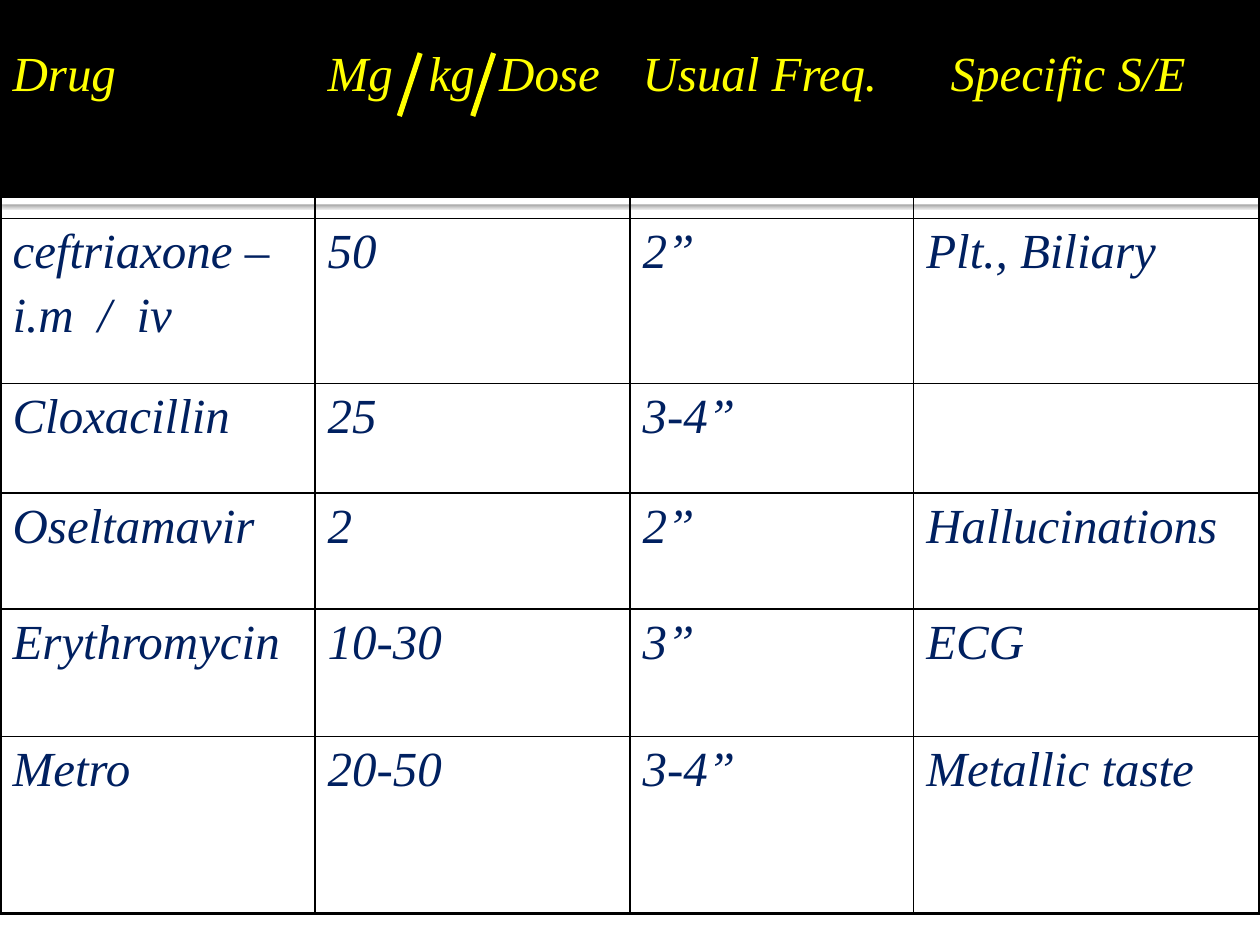
from lxml import etree
from pptx import Presentation
from pptx import util as u
from pptx.dml.color import RGBColor
from pptx.enum import shapes, text
from pptx.oxml.ns import qn

Cm, Pt = u.Cm, u.Pt
INK = {"head": "FFFF00", "body": "002060", "black": "000000", "white": "FFFFFF"}
FONT = "Times New Roman"
WIDE, HIGH = 25.4, 19.05
COLS = [6.35, 6.35, 5.72, 6.98]
ROWS = [3.56, 3.33, 2.21, 2.34, 2.57, 3.56]
THICK, THIN = 2.25, 1
# Each cell is a list of lines; tabs stand for the gaps within a line.
DRUGS = [
    [["Drug"], ["Mg\tkg\tDose"], ["Usual Freq."], ["Specific S/E"]],
    [["ceftriaxone –", "i.m\t/\tiv"], ["50"], ["2”"], ["Plt., Biliary"]],
    [["Cloxacillin"], ["25"], ["3-4”"], []],
    [["Oseltamavir"], ["2"], ["2”"], ["Hallucinations"]],
    [["Erythromycin"], ["10-30"], ["3”"], ["ECG"]],
    [["Metro"], ["20-50"], ["3-4”"], ["Metallic taste"]],
]
TABS = {"Mg\tkg\tDose": [2.04, 3.46], "i.m\t/\tiv": [1.72, 2.5]}
INDENT = {"Specific S/E": 0.49}


def rgb(name):
    return RGBColor.from_string(INK[name])


def sub(node, tag, **attrs):
    return etree.SubElement(node, qn(tag), {k: str(v) for k, v in attrs.items()})


def bar(slide, left, top, width, height, color):
    rect = slide.shapes.add_shape(shapes.MSO_SHAPE.RECTANGLE, Cm(left), Cm(top),
                                  Cm(width), Cm(height))
    rect.shadow.inherit = False
    rect.fill.solid()
    rect.fill.fore_color.rgb = rgb(color)
    rect.line.fill.background()
    return rect


def banner(slide, left, top, width, height):
    """Black band with a thin white strip below it that casts a shadow."""
    strip = bar(slide, left, top + height, width, 0.13, "white")
    effects = strip.element.spPr.find(qn("a:effectLst"))
    shade = sub(effects, "a:outerShdw", blurRad=Pt(2.5), dist=Pt(0.8),
                dir=90 * 60000, algn="ctr", rotWithShape=0)
    sub(sub(shade, "a:srgbClr", val=INK["black"]), "a:alpha", val=60000)
    bar(slide, left, top, width, height, "black")


def edge(cell, row, col):
    """Thick borders on the outside of the grid, thin ones inside."""
    props = cell._tc.get_or_add_tcPr()
    outer = {"L": col == 0, "R": col == len(COLS) - 1,
             "T": row == 0, "B": row == len(ROWS) - 1}
    for side, thick in outer.items():
        line = sub(props, "a:ln" + side, w=Pt(THICK if thick else THIN))
        sub(sub(line, "a:solidFill"), "a:srgbClr", val=INK["black"])
    cell.fill.background()


def write(cell, lines, color):
    frame = cell.text_frame
    cell.vertical_anchor = text.MSO_ANCHOR.TOP
    for i, words in enumerate(lines):
        para = frame.add_paragraph() if i else frame.paragraphs[0]
        para.space_before = Pt(5.6 if i else 0)
        props = para._p.get_or_add_pPr()
        if words in INDENT:
            props.set("marL", str(Cm(INDENT[words])))
        if words in TABS:
            stops = sub(props, "a:tabLst")
            for pos in TABS[words]:
                sub(stops, "a:tab", pos=Cm(pos), algn="l")
        run = para.add_run()
        run.text = words
        font = run.font
        font.name, font.size, font.italic = FONT, Pt(28), True
        font.color.rgb = rgb(color)


def grid(slide, left, top, width, height):
    table = slide.shapes.add_table(len(ROWS), len(COLS), Cm(left), Cm(top),
                                   Cm(width), Cm(height)).table
    table.first_row = table.horz_banding = False
    for col, size in zip(table.columns, COLS):
        col.width = Cm(size)
    for row, size in zip(table.rows, ROWS):
        row.height = Cm(size)
    for r, drug in enumerate(DRUGS):
        for c, lines in enumerate(drug):
            cell = table.cell(r, c)
            edge(cell, r, c)
            write(cell, lines, "body" if r else "head")


def slashes(slide, left, top, width, height):
    """Two slanted strokes between the units of the dose heading."""
    lean = 0.42
    for x in (left, left + width - lean):
        line = slide.shapes.add_connector(shapes.MSO_CONNECTOR.STRAIGHT, Cm(x),
                                          Cm(top + height), Cm(x + lean), Cm(top))
        line.line.color.rgb = rgb("head")
        line.line.width = Pt(3)
        sub(line.element.spPr, "a:effectLst")


def main():
    deck = Presentation()
    deck.slide_width, deck.slide_height = Cm(WIDE), Cm(HIGH)
    slide = deck.slides.add_slide(deck.slide_layouts[6])
    banner(slide, 0, 0, WIDE, 3.99)
    grid(slide, 0, 0.84, sum(COLS), sum(ROWS))
    slashes(slide, 8.05, 1.07, 1.9, 1.27)
    deck.save("out.pptx")


if __name__ == "__main__":
    main()
